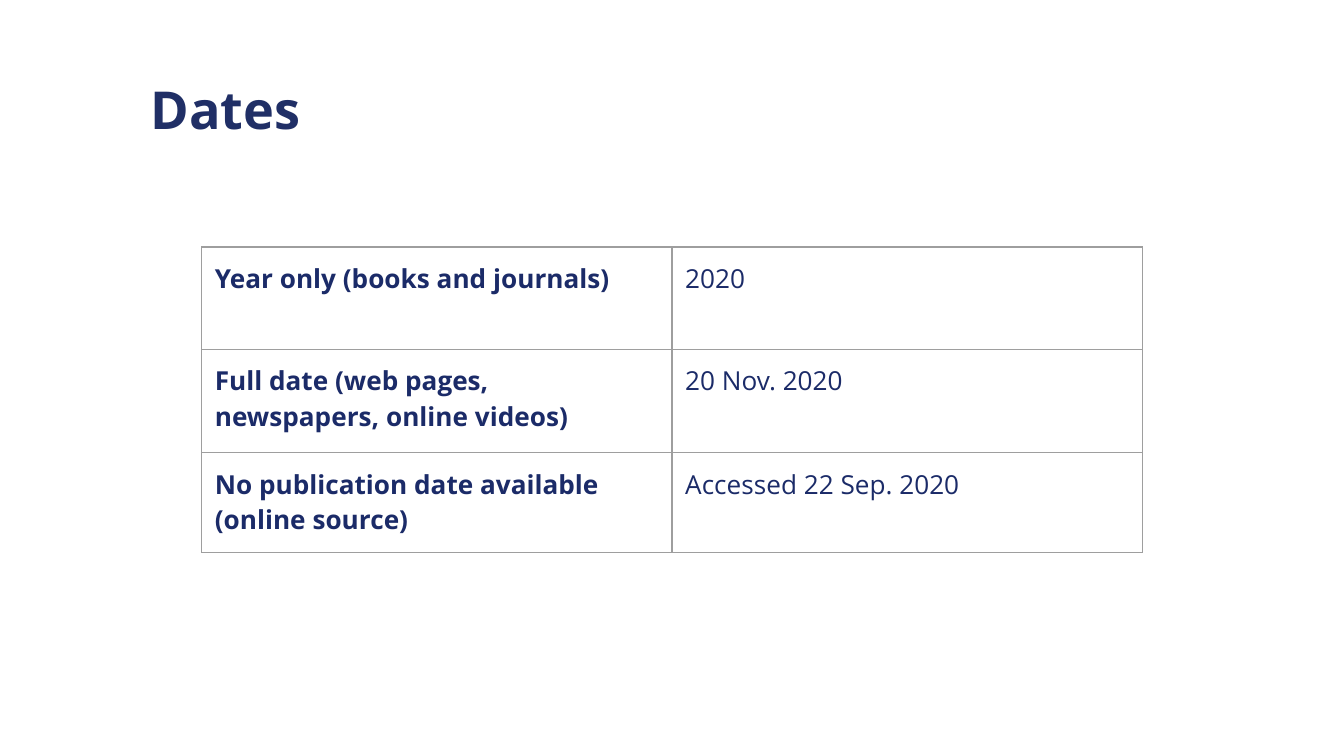
from lxml import etree
from pptx import Presentation
from pptx.dml.color import RGBColor
from pptx.enum import text
from pptx.oxml import ns
from pptx.util import Cm, Pt

# Content
TITLE = "Dates"
ROWS = [
    ("Year only (books and journals)", "2020"),
    ("Full date (web pages, newspapers, online videos)", "20 Nov. 2020"),
    ("No publication date available (online source)", "Accessed 22 Sep. 2020"),
]

# Style
COLORS = {"title": "202F66", "text": "1B2B68", "border": "9E9E9E"}
FONT = "Open Sans"
INSET = Cm(0.25)
COLUMN_WIDTH = Cm(8.89)
ROW_HEIGHTS = [Cm(1.94), Cm(1.95), Cm(1.89)]


def set_insets(holder):
    holder.margin_left = holder.margin_right = INSET
    holder.margin_top = holder.margin_bottom = INSET


def write(frame, words, size, color, bold):
    para = frame.paragraphs[0]
    para.alignment = text.PP_ALIGN.LEFT
    span = para.add_run()
    span.text = words
    span.font.name = FONT
    span.font.size = Pt(size)
    span.font.bold = bold
    span.font.color.rgb = RGBColor.from_string(COLORS[color])


def set_borders(cell, width=Pt(0.75)):
    properties = cell._tc.get_or_add_tcPr()
    for side in ("lnL", "lnR", "lnT", "lnB"):
        line = etree.SubElement(properties, ns.qn(f"a:{side}"), w=str(width))
        fill = etree.SubElement(line, ns.qn("a:solidFill"))
        etree.SubElement(fill, ns.qn("a:srgbClr"), val=COLORS["border"])


deck = Presentation()
deck.slide_width, deck.slide_height = Cm(25.4), Cm(14.29)
page = deck.slides.add_slide(deck.slide_layouts[5])

# Title
title = page.shapes.title
title.left, title.top, title.width, title.height = Cm(2.6), Cm(1.25), Cm(20), Cm(1.6)
frame = title.text_frame
frame.auto_size = text.MSO_AUTO_SIZE.NONE
frame.word_wrap = True
frame.vertical_anchor = text.MSO_ANCHOR.MIDDLE
set_insets(frame)
write(frame, TITLE, 28, "title", True)

# Table of date formats
columns = len(ROWS[0])
table = page.shapes.add_table(
    len(ROWS), columns, Cm(3.81), Cm(4.67), columns * COLUMN_WIDTH, sum(ROW_HEIGHTS)
).table
table.first_row = table.horz_banding = False
for column in table.columns:
    column.width = COLUMN_WIDTH
for row, height, entries in zip(table.rows, ROW_HEIGHTS, ROWS):
    row.height = height
    for index, (cell, words) in enumerate(zip(row.cells, entries)):
        set_insets(cell)
        set_borders(cell)
        cell.fill.background()
        write(cell.text_frame, words, 14, "text", index == 0)

deck.save("out.pptx")
